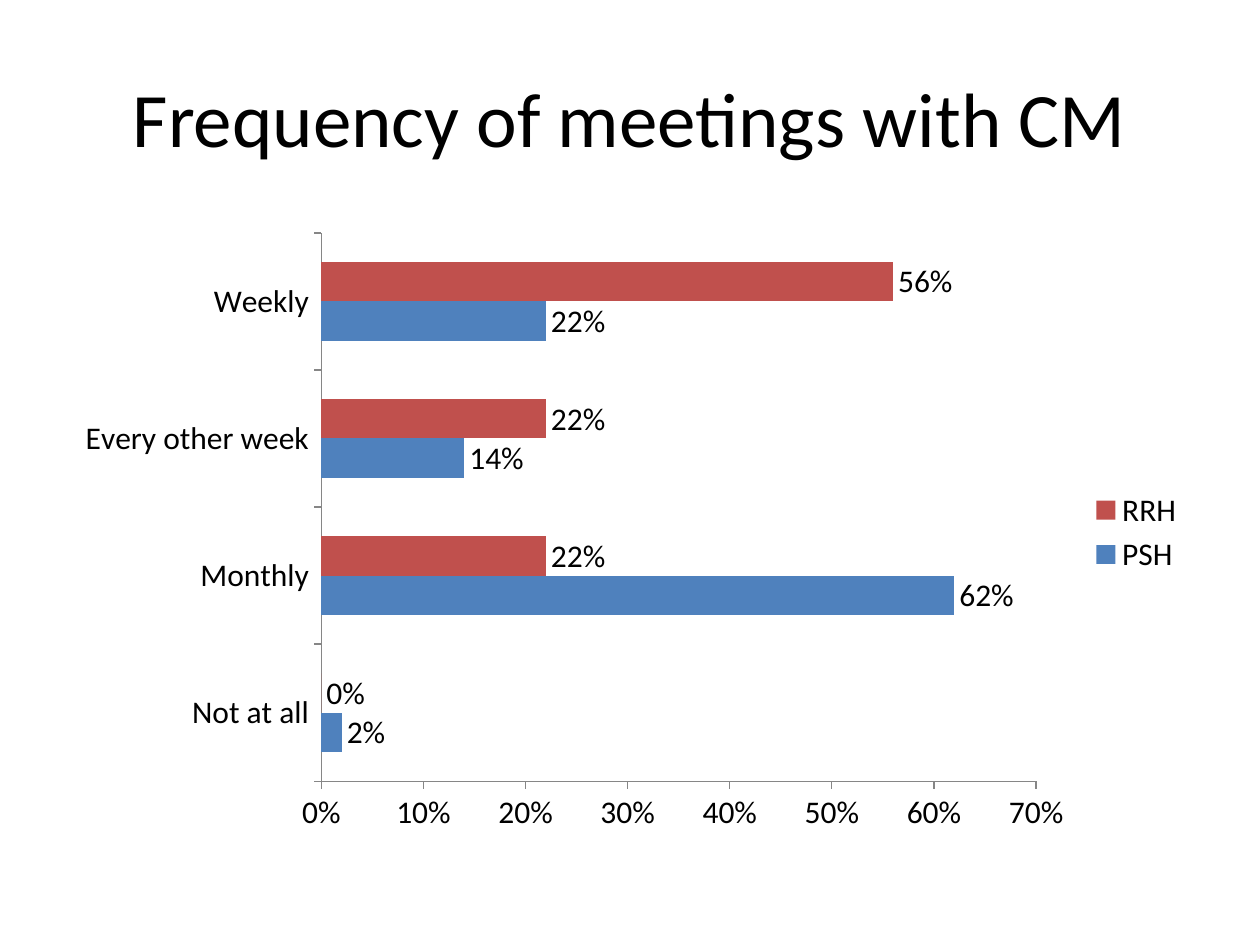
from pptx import Presentation
from pptx.chart.data import CategoryChartData
from pptx.dml.color import RGBColor
from pptx.enum.chart import XL_CHART_TYPE, XL_LABEL_POSITION, XL_LEGEND_POSITION, XL_TICK_MARK
from pptx.enum.text import MSO_ANCHOR, PP_ALIGN
from pptx.util import Pt

BAR_CLUSTERED = XL_CHART_TYPE.BAR_CLUSTERED
OUTSIDE_END = XL_LABEL_POSITION.OUTSIDE_END
LEGEND_RIGHT = XL_LEGEND_POSITION.RIGHT
TICK_OUTSIDE = XL_TICK_MARK.OUTSIDE
MIDDLE = MSO_ANCHOR.MIDDLE
CENTER = PP_ALIGN.CENTER

COLORS = {"text": "000000", "axis": "868686", "PSH": "4F81BD", "RRH": "C0504D"}
PERCENT = "0%"
BLANK_LAYOUT = 6

CATEGORIES = ["Not at all", "Monthly", "Every other week", "Weekly"]
MEETING_SHARES = {
    "PSH": [0.02, 0.62, 0.14, 0.22],
    "RRH": [0, 0.22, 0.22, 0.56],
}


def color(name):
    return RGBColor.from_string(COLORS[name])


def format_font(font, size, font_name="Calibri", color_name="text"):
    font.name = font_name
    font.size = Pt(size)
    font.color.rgb = color(color_name)


def write_text(frame, text, size, align=CENTER, anchor=MIDDLE):
    frame.word_wrap = True
    frame.vertical_anchor = anchor
    para = frame.paragraphs[0]
    para.alignment = align
    span = para.add_run()
    span.text = text
    format_font(span.font, size)


class SlideBuilder:
    """Holds the text sizes and the page being filled."""

    title_size = 44
    chart_size = 18

    def __init__(self, page):
        self.page = page

    def title(self, text, left, top, width, height):
        box = self.page.shapes.add_textbox(Pt(left), Pt(top), Pt(width), Pt(height))
        write_text(box.text_frame, text, self.title_size)

    def bar_chart(self, categories, series_values, left, top, width, height):
        data = CategoryChartData(number_format=PERCENT)
        data.categories = categories
        for name, values in series_values.items():
            data.add_series(name, values)
        chart = self.page.shapes.add_chart(
            BAR_CLUSTERED, Pt(left), Pt(top), Pt(width), Pt(height), data
        ).chart
        format_font(chart.font, self.chart_size)
        chart.has_title = False
        chart.has_legend = True
        chart.legend.position = LEGEND_RIGHT
        chart.legend.include_in_layout = False

        plot = chart.plots[0]
        plot.gap_width = 150
        plot.vary_by_categories = False
        for series in plot.series:
            self.style_series(series)
        for axis in (chart.category_axis, chart.value_axis):
            self.style_axis(axis)
        chart.value_axis.tick_labels.number_format = PERCENT
        chart.value_axis.tick_labels.number_format_is_linked = False

    def style_series(self, series):
        series.format.fill.solid()
        series.format.fill.fore_color.rgb = color(series.name)
        series.invert_if_negative = False
        labels = series.data_labels
        labels.show_value = True
        labels.number_format = PERCENT
        labels.number_format_is_linked = False
        labels.position = OUTSIDE_END
        format_font(labels.font, self.chart_size)

    def style_axis(self, axis):
        axis.has_major_gridlines = False
        axis.major_tick_mark = TICK_OUTSIDE
        axis.format.line.color.rgb = color("axis")
        axis.format.line.width = Pt(0.75)


def main():
    deck = Presentation()
    deck.slide_width, deck.slide_height = Pt(720), Pt(540)
    page = deck.slides.add_slide(deck.slide_layouts[BLANK_LAYOUT])
    builder = SlideBuilder(page)
    builder.title("Frequency of meetings with CM", 36, 21.6, 648, 90)
    builder.bar_chart(CATEGORIES, MEETING_SHARES, 36, 126, 648, 356.4)
    deck.save("out.pptx")


if __name__ == "__main__":
    main()
